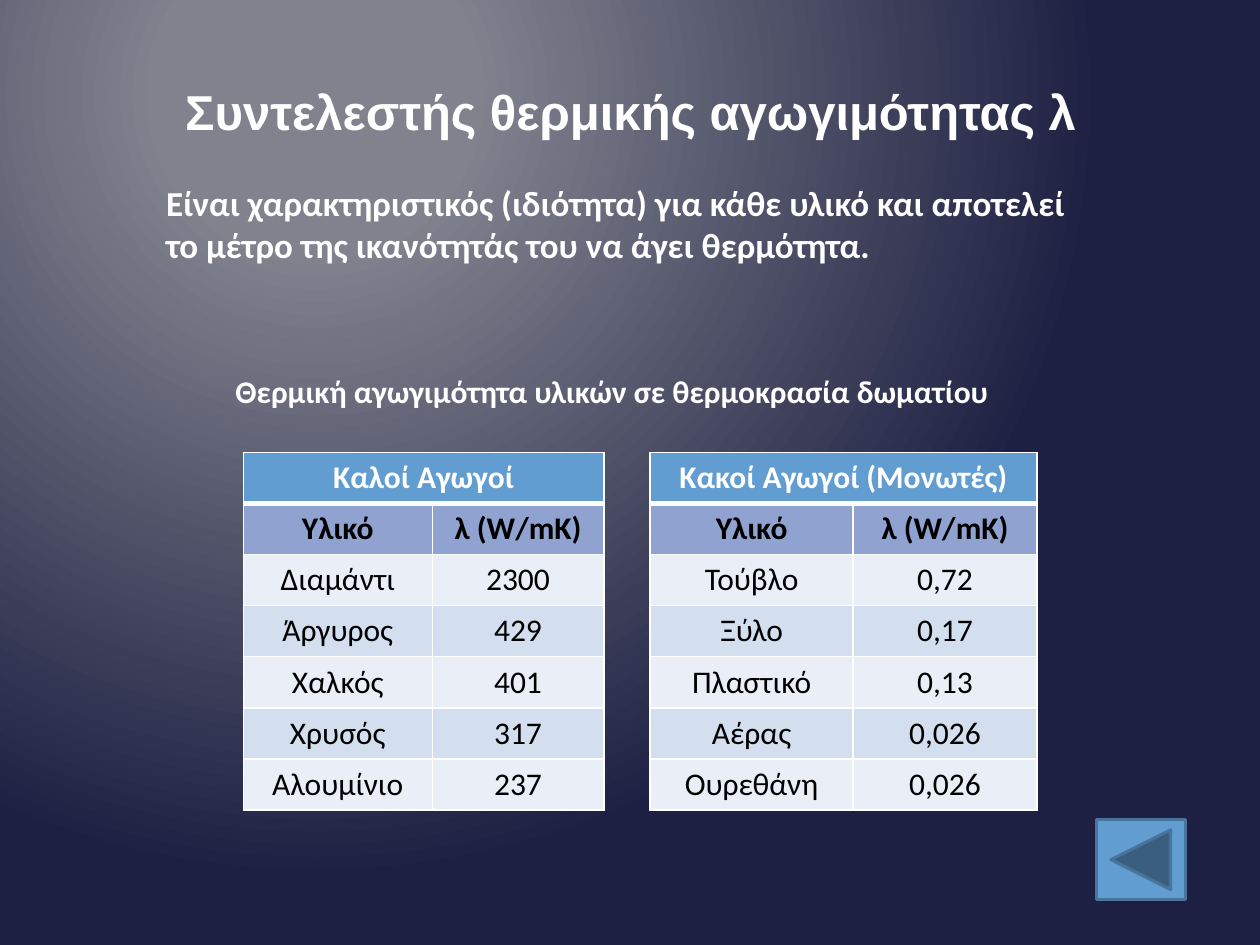
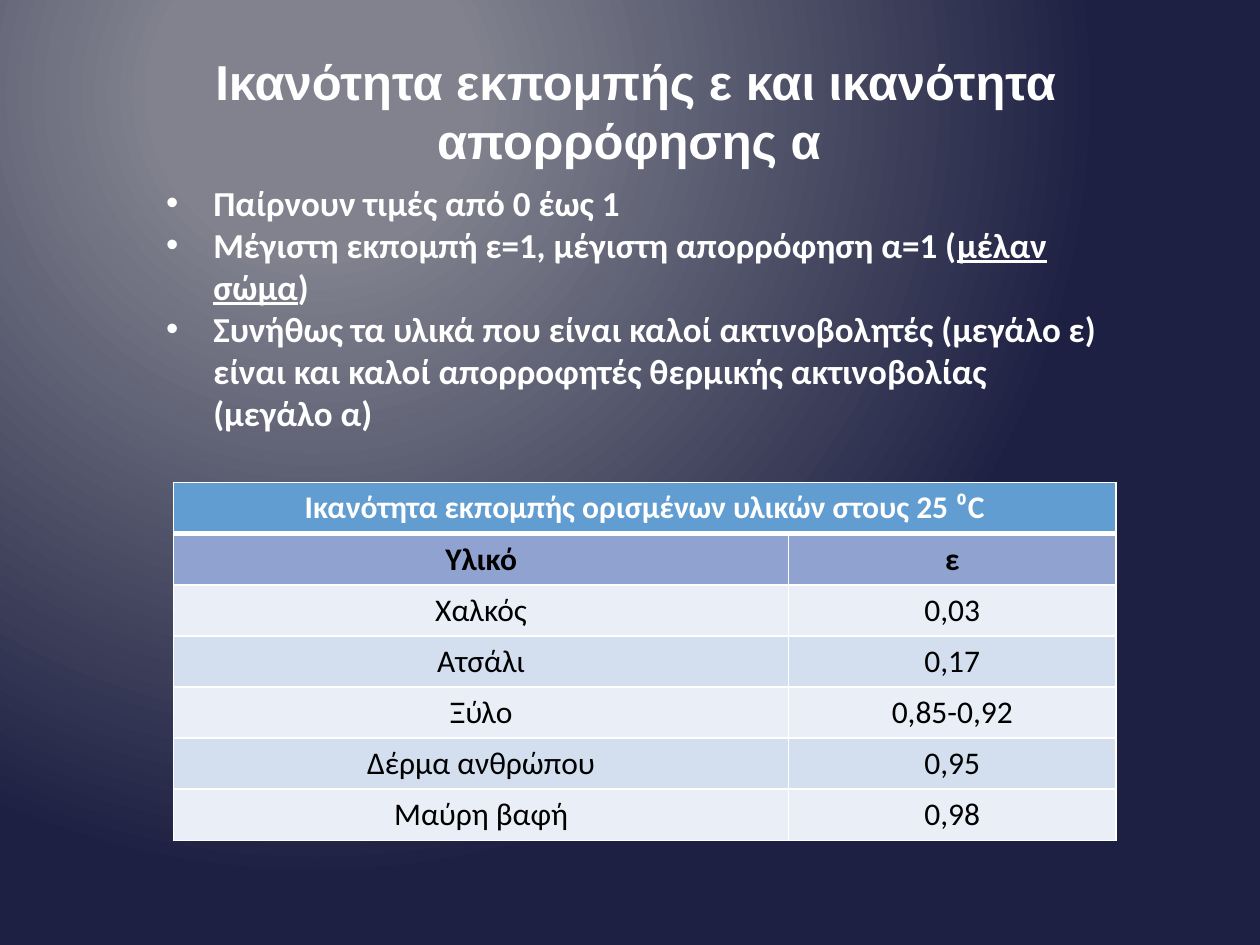
from pptx import Presentation
from pptx.dml.color import RGBColor
from pptx.enum.shapes import MSO_SHAPE as Preset
from pptx.enum.text import MSO_ANCHOR as Anchor, MSO_AUTO_SIZE as AutoSize, PP_ALIGN as Align
from pptx.oxml import parse_xml
from pptx.oxml.ns import nsdecls, qn
from pptx.util import Pt

WHITE = RGBColor(0xFF, 0xFF, 0xFF)
BLACK = RGBColor(0x00, 0x00, 0x00)
GLOW = RGBColor(0x81, 0x82, 0x8E)
NIGHT = RGBColor(0x1D, 0x20, 0x42)
BLUE = RGBColor(0x62, 0x9D, 0xD1)
BLUE_EDGE = RGBColor(0x49, 0x74, 0x9B)
HEADING = RGBColor(0x90, 0xA2, 0xCF)
PALE_ROW = RGBColor(0xEA, 0xEF, 0xF7)
TINTED_ROW = RGBColor(0xD3, 0xDF, 0xEE)

TITLE_FONT = "Arial"
BODY_FONT = "Calibri"
TITLE_LAYOUT = 5
ROW_HEIGHT = 29.2
BULLET_INDENT = 27


class Lesson:
    def __init__(self):
        self.deck = Presentation()
        self.deck.slide_width, self.deck.slide_height = Pt(720), Pt(540)
        self.page = None
        self.paint_background()

    def paint_background(self):
        master = self.deck.slide_master
        fill = master.background.fill
        fill.gradient()
        for stop, color, position in zip(fill.gradient_stops, (GLOW, NIGHT), (0.2, 1)):
            stop.color.rgb = color
            stop.position = position
        gradient = master.element.find(".//" + qn("a:gradFill"))
        linear = gradient.find(qn("a:lin"))
        gradient.replace(linear, parse_xml(
            f'<a:path {nsdecls("a")} path="circle">'
            '<a:fillToRect l="50000" t="20000" r="100000" b="100000"/></a:path>'))

    def style(self, para, size, color=WHITE, bold=True, font=BODY_FONT):
        for span in para.runs:
            span.font.name = font
            span.font.size = Pt(size)
            span.font.bold = bold
            span.font.color.rgb = color

    def new_page(self, title, left, top):
        self.page = self.deck.slides.add_slide(self.deck.slide_layouts[TITLE_LAYOUT])
        box = self.page.shapes.title
        box.left, box.top, box.width, box.height = Pt(left), Pt(top), Pt(607), Pt(62.6)
        frame = box.text_frame
        frame.text = title
        frame.auto_size = AutoSize.NONE
        frame.vertical_anchor = Anchor.TOP
        frame.margin_left = frame.margin_right = 0
        para = frame.paragraphs[0]
        para.alignment = Align.CENTER
        self.style(para, 28, font=TITLE_FONT)

    def text(self, paragraphs, left, top, width, height, size=20, bullets=False):
        box = self.page.shapes.add_textbox(Pt(left), Pt(top), Pt(width), Pt(height))
        frame = box.text_frame
        frame.word_wrap = True
        for index, spans in enumerate(paragraphs):
            para = frame.add_paragraph() if index else frame.paragraphs[0]
            for position, words in enumerate(spans):
                span = para.add_run()
                span.text = words
                span.font.underline = position % 2 == 1
            self.style(para, size)
            if bullets:
                self.bullet(para)

    def bullet(self, para):
        properties = para._p.get_or_add_pPr()
        properties.set("marL", str(Pt(BULLET_INDENT)))
        properties.set("indent", str(-Pt(BULLET_INDENT)))
        properties.append(parse_xml(f'<a:buFont {nsdecls("a")} typeface="Arial"/>'))
        properties.append(parse_xml(f'<a:buChar {nsdecls("a")} char="•"/>'))

    def borders(self, cell, row):
        properties = cell._tc.get_or_add_tcPr()
        widths = {"L": 1, "R": 1, "T": 3 if row == 1 else 1, "B": 3 if row == 0 else 1}
        for side, width in widths.items():
            properties.append(parse_xml(
                f'<a:ln{side} {nsdecls("a")} w="{Pt(width)}"><a:solidFill>'
                f'<a:srgbClr val="{WHITE}"/></a:solidFill></a:ln{side}>'))

    def table(self, caption, headings, values, left, top, widths):
        rows = [(caption, ""), headings, *values]
        frame = self.page.shapes.add_table(
            len(rows), len(widths), Pt(left), Pt(top),
            Pt(sum(widths)), Pt(ROW_HEIGHT * len(rows)))
        grid = frame.table
        for column, width in zip(grid.columns, widths):
            column.width = Pt(width)
        for index, row in enumerate(rows):
            grid.rows[index].height = Pt(ROW_HEIGHT)
            if index < 2:
                color = (BLUE, HEADING)[index]
            else:
                color = (PALE_ROW, TINTED_ROW)[index % 2]
            for cell, words in zip(grid.rows[index].cells, row):
                self.borders(cell, index)
                cell.fill.solid()
                cell.fill.fore_color.rgb = color
                cell.text_frame.text = words
                para = cell.text_frame.paragraphs[0]
                para.alignment = Align.CENTER
                self.style(para, 18, BLACK if index else WHITE, bold=index < 2)
        grid.cell(0, 0).merge(grid.cell(0, len(widths) - 1))

    def back_button(self, left, top, width, height):
        button = self.page.shapes.add_shape(
            Preset.ACTION_BUTTON_BACK_OR_PREVIOUS, Pt(left), Pt(top), Pt(width), Pt(height))
        button.shadow.inherit = False
        button.fill.solid()
        button.fill.fore_color.rgb = BLUE
        button.line.color.rgb = BLUE_EDGE
        button.line.width = Pt(1.75)


def conductivity_page(lesson):
    lesson.new_page("Συντελεστής θερμικής αγωγιμότητας λ", 56.9, 43.2)
    lesson.text([["Είναι χαρακτηριστικός (ιδιότητα) για κάθε υλικό και αποτελεί "
                  "το μέτρο της ικανότητάς του να άγει θερμότητα."]], 87.8, 100, 550, 55.4)
    lesson.text([["Θερμική αγωγιμότητα υλικών σε θερμοκρασία δωματίου"]],
                127.4, 208.8, 481.7, 29, size=18)
    headings = ("Υλικό", "λ (W/mK)")
    conductors = [("Διαμάντι", "2300"), ("Άργυρος", "429"), ("Χαλκός", "401"),
                  ("Χρυσός", "317"), ("Αλουμίνιο", "237")]
    insulators = [("Τούβλο", "0,72"), ("Ξύλο", "0,17"), ("Πλαστικό", "0,13"),
                  ("Αέρας", "0,026"), ("Ουρεθάνη", "0,026")]
    lesson.table("Καλοί Αγωγοί", headings, conductors, 139, 258.5, (108, 98))
    lesson.table("Κακοί Αγωγοί (Μονωτές)", headings, insulators, 371.5, 258.5, (116, 105))
    lesson.back_button(626.4, 468.5, 51, 45.5)


def emissivity_page(lesson):
    lesson.new_page("Ικανότητα εκπομπής ε και ικανότητα απορρόφησης α ", 59.8, 26)
    lesson.text([
        ["Παίρνουν τιμές από 0 έως 1"],
        ["Μέγιστη εκπομπή ε=1, μέγιστη απορρόφηση α=1 (", "μέλαν σώμα", ")"],
        ["Συνήθως τα υλικά που είναι καλοί ακτινοβολητές (μεγάλο ε) είναι και "
         "καλοί απορροφητές θερμικής ακτινοβολίας (μεγάλο α)"],
    ], 87.8, 100, 550, 152.6, bullets=True)
    emissivities = [("Χαλκός", "0,03"), ("Ατσάλι", "0,17"), ("Ξύλο", "0,85-0,92"),
                    ("Δέρμα ανθρώπου", "0,95"), ("Μαύρη βαφή", "0,98")]
    lesson.table("Ικανότητα εκπομπής ορισμένων υλικών στους 25 ⁰C", ("Υλικό", "ε"),
                 emissivities, 99.2, 275.8, (351.4, 187.2))


def main():
    lesson = Lesson()
    conductivity_page(lesson)
    emissivity_page(lesson)
    lesson.deck.save("out.pptx")


if __name__ == "__main__":
    main()
